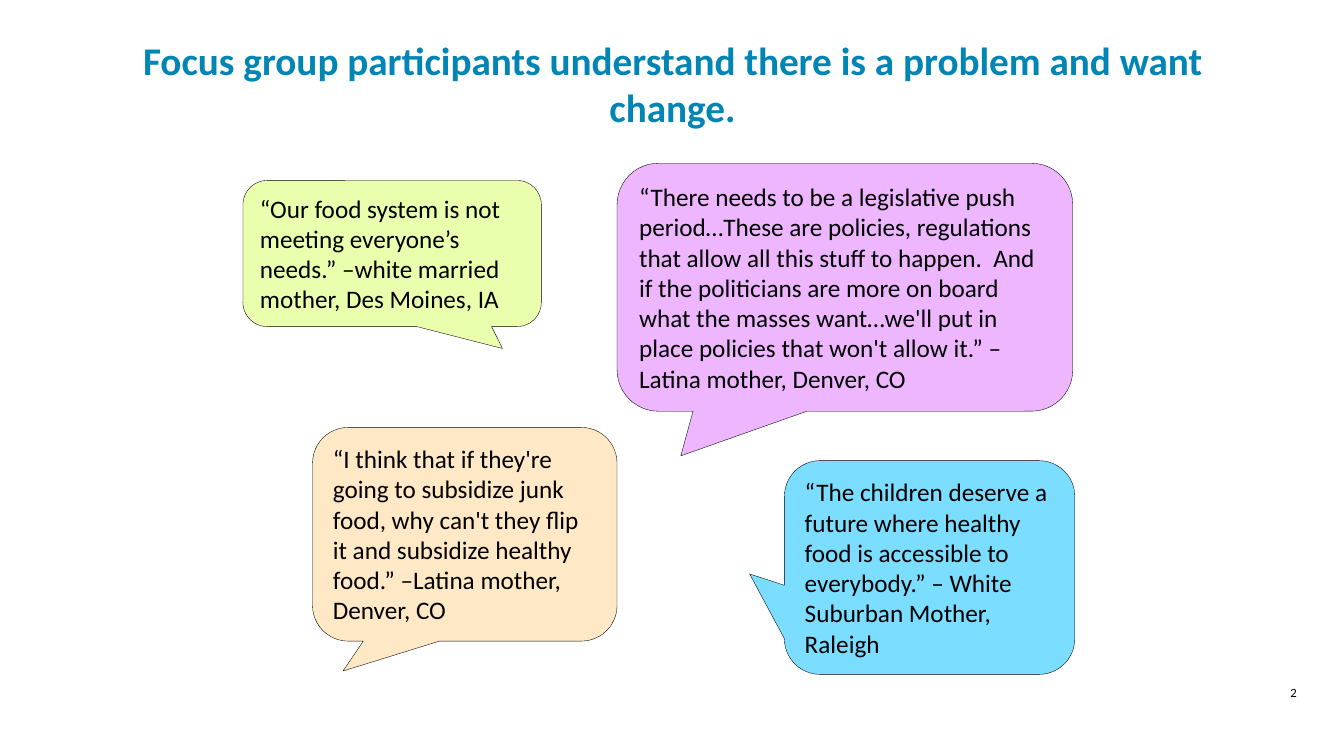
from pptx import Presentation
from pptx.dml.color import RGBColor
from pptx.enum.shapes import MSO_SHAPE
from pptx.enum.text import MSO_ANCHOR, PP_ALIGN
from pptx.util import Inches, Pt

CALLOUT = MSO_SHAPE.ROUNDED_RECTANGULAR_CALLOUT
MIDDLE, TOP = MSO_ANCHOR.MIDDLE, MSO_ANCHOR.TOP
LEFT, CENTER = PP_ALIGN.LEFT, PP_ALIGN.CENTER
TITLE_ONLY = 5
FONT = "Calibri"
BLACK = "000000"

# Each quote: box (left, top, width, height), tail tip from the centre, fill, words
QUOTES = [
    ((2.41, 1.79, 2.96, 1.45), (0.37, 0.65), "EAFFAE",
     "“Our food system is not meeting everyone’s needs.” "
     "–white married mother, Des Moines, IA"),
    ((3.1, 4.24, 3.02, 2.12), (-0.4, 0.64), "FFE8C5",
     "“I think that if they're going to subsidize junk food, why can't they "
     "flip it and subsidize healthy food.” –Latina mother, Denver, CO"),
    ((6.12, 1.62, 4.52, 2.46), (-0.36, 0.68), "EEB6FF",
     "“There needs to be a legislative push period…These are policies, "
     "regulations that allow all this stuff to happen.  And if the politicians "
     "are more on board what the masses want…we'll put in place policies that "
     "won't allow it.” –Latina mother, Denver, CO"),
    ((7.78, 4.57, 2.88, 2.12), (-0.62, 0.03), "7BDDFF",
     "“The children deserve a future where healthy food is accessible to "
     "everybody.” – White Suburban Mother, Raleigh"),
]


def color(hex_value):
    return RGBColor.from_string(hex_value)


def write(frame, words, size, align=LEFT, anchor=MIDDLE, ink=BLACK, bold=False):
    frame.word_wrap = True
    frame.vertical_anchor = anchor
    paragraph = frame.paragraphs[0]
    paragraph.alignment = align
    run = paragraph.add_run()
    run.text = words
    run.font.name = FONT
    run.font.size = Pt(size)
    run.font.bold = bold
    run.font.color.rgb = color(ink)


def add_title(slide, box, words):
    title = slide.shapes.title
    title.left, title.top, title.width, title.height = map(Inches, box)
    write(title.text_frame, words, 28, CENTER, ink="0085B4", bold=True)


def add_quote(slide, box, tail, fill, words):
    bubble = slide.shapes.add_shape(CALLOUT, *map(Inches, box))
    bubble.shadow.inherit = False
    bubble.adjustments[0], bubble.adjustments[1] = tail
    bubble.fill.solid()
    bubble.fill.fore_color.rgb = color(fill)
    bubble.line.color.rgb = color(BLACK)
    bubble.line.width = Pt(0.25)
    write(bubble.text_frame, words, 18)


def add_page_number(slide, box, number):
    label = slide.shapes.add_textbox(*map(Inches, box))
    write(label.text_frame, number, 9, CENTER, TOP)


def main():
    deck = Presentation()
    deck.slide_width, deck.slide_height = Inches(13.33), Inches(7.5)
    slide = deck.slides.add_slide(deck.slide_layouts[TITLE_ONLY])

    # Heading
    add_title(slide, (0.99, 0.25, 11.36, 1.16),
              "Focus group participants understand there is a problem "
              "and want change.")

    # Speech bubbles
    for quote in QUOTES:
        add_quote(slide, *quote)

    # Footer
    add_page_number(slide, (12.33, 6.75, 1, 0.33), "2")

    deck.save("out.pptx")


if __name__ == "__main__":
    main()
